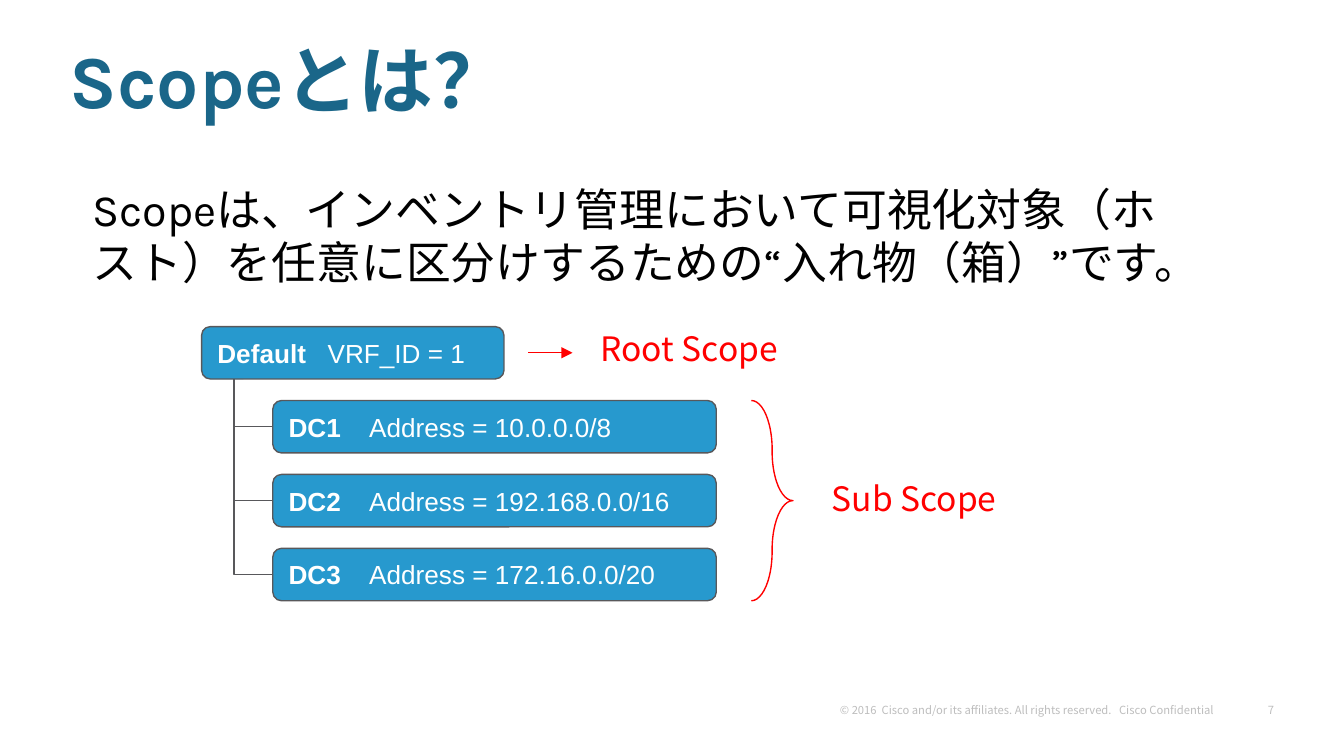
"""Build a slide that explains scopes with a small tree of boxes."""

import dataclasses
import typing

import lxml.etree
import pptx
import pptx.dml.color
import pptx.enum.shapes
import pptx.enum.text
import pptx.oxml.ns
import pptx.util

CELL = 0.1
BLUE, NAVY, GREY, RED, WHITE, BLACK = "2799CE", "1A6689", "58585B", "FF0000", "FFFFFF", "000000"
SANS, LATIN, CJK = "Arial", "Karla", "Noto Sans CJK JP"
SHAPE = pptx.enum.shapes.MSO_SHAPE
LINK = pptx.enum.shapes.MSO_CONNECTOR
ANCHOR = pptx.enum.text.MSO_ANCHOR
ALIGN = pptx.enum.text.PP_ALIGN
FIT = pptx.enum.text.MSO_AUTO_SIZE


@dataclasses.dataclass(frozen=True)
class Area:
    """A place on the grid, in columns and rows."""

    col: float
    row: float
    wide: float
    high: float

    @property
    def mid(self) -> float:
        """Return the row of the middle."""
        return self.row + self.high / 2


@dataclasses.dataclass(frozen=True)
class Scope:
    """One box of the tree, with its tab stop in columns."""

    name: str
    rule: str
    area: Area
    tab: float


@dataclasses.dataclass(frozen=True)
class Label:
    """A plain text and its format."""

    text: str
    area: Area
    size: float
    face: str
    tint: str
    frame: dict = dataclasses.field(default_factory=dict)
    align: typing.Any = ALIGN.LEFT
    alpha: int = 100


TRUNK, TOP, STEP, HIGH = 17.4, 24.3, 5.5, 3.9
ROOT = Scope("Default", "VRF_ID = 1", Area(15, TOP, 22.5, HIGH), 8.2)
NETS = ("10.0.0.0/8", "192.168.0.0/16", "172.16.0.0/20")
SUBS = [
    Scope(f"DC{num}", f"Address = {net}", Area(20.3, TOP + STEP * num, 33, HIGH), 6)
    for num, net in enumerate(NETS, 1)
]
BRACE = Area(55.9, SUBS[0].area.row, 3.1, 2 * STEP + HIGH)
TITLE = Area(4.2, 2.5, 91.3, 8)


def span(cells: float) -> pptx.util.Emu:
    """Turn grid cells into a length."""
    return pptx.util.Inches(cells * CELL)


def hue(code: str) -> pptx.dml.color.RGBColor:
    """Turn a hex string into a colour."""
    return pptx.dml.color.RGBColor.from_string(code)


def put(item: typing.Any, **vals: typing.Any) -> None:
    """Set each named value on an item."""
    for key, val in vals.items():
        setattr(item, key, val)


def pads(side: float, edge: float) -> dict:
    """Return text margins in cells as format values."""
    return dict(margin_left=span(side), margin_right=span(side),
                margin_top=span(edge), margin_bottom=span(edge))


def box(area: Area) -> tuple:
    """Return an area as four lengths."""
    return tuple(span(val) for val in dataclasses.astuple(area))


def sub(node: typing.Any, tag: str, **vals: str) -> typing.Any:
    """Add a child element in the drawing namespace."""
    return lxml.etree.SubElement(node, pptx.oxml.ns.qn(f"a:{tag}"), **vals)


def write(para: typing.Any, text: str, size: float, face: str, tint: str,
          bold: bool = False, alpha: int = 100) -> None:
    """Add a formatted run to a paragraph."""
    run = para.add_run()
    run.text = text
    put(run.font, size=pptx.util.Pt(size), name=face, bold=bold)
    run.font.color.rgb = hue(tint)
    props = run.font._element
    sub(props, "ea", typeface=face)
    if alpha < 100:
        sub(props.find(".//" + pptx.oxml.ns.qn("a:srgbClr")), "alpha", val=str(alpha * 1000))


def edge(item: typing.Any, tint: str) -> None:
    """Draw the thin line of a shape or connector."""
    item.line.color.rgb = hue(tint)
    item.line.width = pptx.util.Pt(0.75)


def draw(slide: typing.Any, kind: typing.Any, area: Area, tint: str) -> typing.Any:
    """Add a preset shape with no shadow."""
    shape = slide.shapes.add_shape(kind, *box(area))
    shape.shadow.inherit = False
    edge(shape, tint)
    return shape


def node(slide: typing.Any, scope: Scope) -> None:
    """Draw one scope box."""
    shape = draw(slide, SHAPE.ROUNDED_RECTANGLE, scope.area, GREY)
    shape.fill.solid()
    shape.fill.fore_color.rgb = hue(BLUE)
    put(shape.text_frame, vertical_anchor=ANCHOR.MIDDLE, word_wrap=True, **pads(1, 1))
    para = shape.text_frame.paragraphs[0]
    para.alignment = ALIGN.LEFT
    stops = sub(para._p.get_or_add_pPr(), "tabLst")
    sub(stops, "tab", pos=str(int(span(scope.tab))), algn="l")
    write(para, scope.name, 14, SANS, WHITE, bold=True)
    write(para, f"\t{scope.rule}", 14, SANS, WHITE)


def link(slide: typing.Any, kind: typing.Any, ends: tuple, tint: str) -> typing.Any:
    """Add a connector with no shadow."""
    line = slide.shapes.add_connector(kind, *(span(val) for val in ends))
    edge(line, tint)
    sub(line.element.spPr, "effectLst")
    return line


def branch(slide: typing.Any, area: Area) -> None:
    """Join a box to the trunk with a single bend."""
    ends = (area.col, area.mid, TRUNK, TOP + HIGH)
    line = link(slide, LINK.ELBOW, ends, GREY)
    line.element.spPr.find(pptx.oxml.ns.qn("a:prstGeom")).set("prst", "bentConnector2")


def note(slide: typing.Any, label: Label) -> None:
    """Add a text box."""
    frame = slide.shapes.add_textbox(*box(label.area)).text_frame
    put(frame, **{"word_wrap": True, **label.frame})
    para = frame.paragraphs[0]
    para.alignment = label.align
    write(para, label.text, label.size, label.face, label.tint, alpha=label.alpha)


def head(slide: typing.Any, text: str) -> None:
    """Place and format the title."""
    title = slide.shapes.title
    put(title, **dict(zip(("left", "top", "width", "height"), box(TITLE))))
    put(title.text_frame, vertical_anchor=ANCHOR.MIDDLE, auto_size=FIT.NONE, **pads(1, 0.5))
    para = title.text_frame.paragraphs[0]
    put(para, alignment=ALIGN.LEFT, line_spacing=0.8)
    write(para, text, 40, LATIN, NAVY, bold=True)


def main() -> None:
    """Build and save the slide."""
    deck = pptx.Presentation()
    put(deck, slide_width=span(100), slide_height=span(56.25))
    slide = deck.slides.add_slide(deck.slide_layouts[5])
    head(slide, "Scopeとは？")
    foot = dict(vertical_anchor=ANCHOR.BOTTOM, **pads(0.7, 0.3))
    rights = "© 2016  Cisco and/or its affiliates. All rights reserved.   Cisco Confidential"
    lead = "Scopeは、インベントリ管理において可視化対象（ホスト）を任意に区分けするための“入れ物（箱）”です。"
    for label in (
        Label("7", Area(92.7, 51.9, 2.8, 1.7), 6, CJK, BLACK,
              {**foot, "word_wrap": False}, ALIGN.RIGHT, 25),
        Label(rights, Area(61.8, 51.9, 31.4, 1.7), 6, CJK, BLACK, foot, alpha=25),
        Label(lead, Area(5.9, 13, 82.7, 9.1), 24, LATIN, BLACK),
        Label("Root Scope", Area(43.7, 23.9, 22.8, 4), 18, CJK, RED),
        Label("Sub Scope", Area(60.9, 35.1, 19.5, 4), 18, CJK, RED),
    ):
        note(slide, label)
    for scope in (ROOT, *SUBS):
        node(slide, scope)
    for scope in SUBS:
        branch(slide, scope.area)
    arrow = link(slide, LINK.STRAIGHT, (39.3, ROOT.area.mid, 42.6, ROOT.area.mid), RED)
    sub(arrow.line._get_or_add_ln(), "tailEnd", type="triangle")
    brace = draw(slide, SHAPE.RIGHT_BRACE, BRACE, RED)
    brace.fill.background()
    brace.adjustments[0] = 1.18
    deck.save("out.pptx")


if __name__ == "__main__":
    main()
